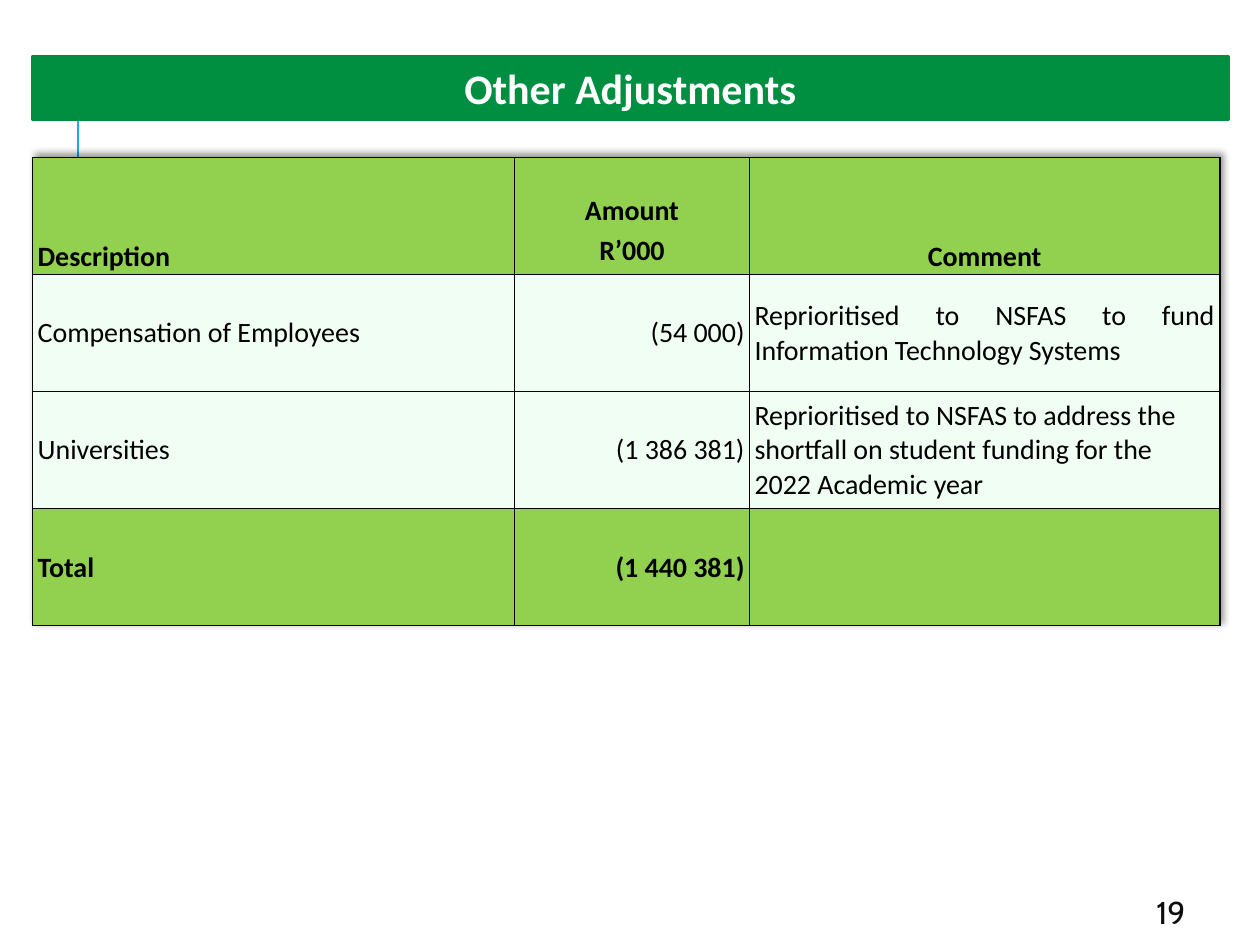
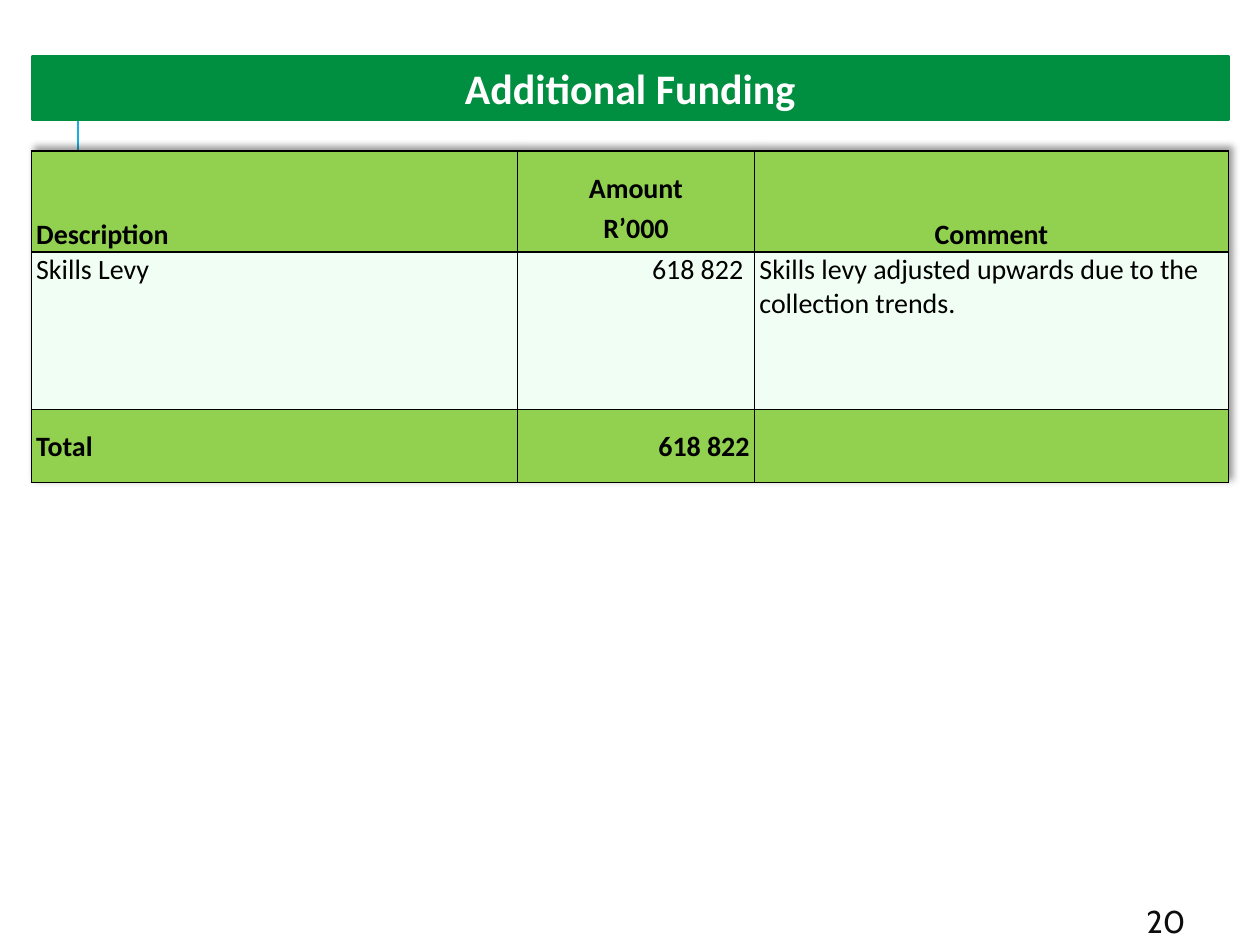
from lxml import etree
from pptx import Presentation
from pptx.dml.color import RGBColor
from pptx.enum.shapes import MSO_CONNECTOR
from pptx.enum.text import MSO_ANCHOR as ANCHOR, PP_ALIGN as ALIGN
from pptx.oxml import parse_xml
from pptx.oxml.ns import nsdecls, qn
from pptx.util import Cm, Pt

# Content
HEADER = ["Description", "Amount\nR’000", "Comment"]
SLIDES = [
    dict(
        title="Other Adjustments",
        rows=[
            HEADER,
            ["Compensation of Employees", "(54 000)",
             "Reprioritised to NSFAS to fund Information Technology Systems"],
            ["Universities", "(1 386 381)",
             "Reprioritised to NSFAS to address the shortfall on student "
             "funding for the 2022 Academic year"],
            ["Total", "(1 440 381)", ""],
        ],
        table_at=(0.66, 3.17), widths=[9.71, 4.74, 9.48], heights=[2.36] * 4,
        body_anchor=ANCHOR.MIDDLE, justified=[(1, 2)],
        number="19", number_box=(23.06, 17.93, 2.11, 0.89),
    ),
    dict(
        title="Additional Funding",
        rows=[
            HEADER,
            ["Skills Levy", "618 822 ",
             "Skills levy adjusted upwards due to the collection trends."],
            ["Total", "618 822", ""],
        ],
        table_at=(0.63, 3.04), widths=[9.8, 4.78, 9.55], heights=[2.04, 3.18, 1.47],
        body_anchor=ANCHOR.TOP, justified=[],
        number="20", number_box=(22.86, 17.93, 2.34, 1.27),
    ),
]

# Shared style
BAND = RGBColor(0x00, 0x8E, 0x40)
RULE = RGBColor(0x1C, 0xAD, 0xE4)
HEAD_FILL = RGBColor(0x92, 0xD0, 0x50)
BODY_FILL = RGBColor(0xF0, 0xFE, 0xF3)
WHITE = RGBColor(0xFF, 0xFF, 0xFF)
BLACK = RGBColor(0x00, 0x00, 0x00)
NUMBER_INK = RGBColor(0x0D, 0x0D, 0x0D)

TITLE_FONT = dict(name="Calibri", size=Pt(24), bold=True)
CELL_FONT = dict(name="Calibri", size=Pt(16))
NUMBER_FONT = dict(name="Cabin", size=Pt(18))

TITLE_BOX = (0.64, 1.14, 24.13, 1.27)
RULE_X, RULE_TOP, RULE_BOTTOM = 1.57, 2.29, 4.83
SIDE_MARGIN, HEAD_MARGIN, TOP_MARGIN = 0.1, 0.13, 0.02
HEAD_ALIGN = [ALIGN.LEFT, ALIGN.CENTER, ALIGN.CENTER]
BODY_ALIGN = [ALIGN.LEFT, ALIGN.RIGHT, ALIGN.LEFT]


def write(p, text, color, **font):
    r = p.add_run()
    r.text = text
    for name, value in font.items():
        setattr(r.font, name, value)
    r.font.color.rgb = color


def add_title(slide, text):
    sp = slide.shapes.title
    sp.left, sp.top, sp.width, sp.height = map(Cm, TITLE_BOX)
    sp.fill.solid()
    sp.fill.fore_color.rgb = sp.line.color.rgb = BAND
    sp.line.width = Pt(1.25)
    tf = sp.text_frame
    tf.vertical_anchor = ANCHOR.MIDDLE
    p = tf.paragraphs[0]
    p.alignment = ALIGN.CENTER
    write(p, text, WHITE, **TITLE_FONT)


def add_rule(slide):
    line = slide.shapes.add_connector(
        MSO_CONNECTOR.STRAIGHT, Cm(RULE_X), Cm(RULE_BOTTOM), Cm(RULE_X), Cm(RULE_TOP))
    line.line.color.rgb = RULE
    line.line.width = Pt(1.5)
    etree.SubElement(line._element.spPr, qn("a:effectLst"))
    slide.shapes._spTree.insert(2, line._element)  # behind the title band


def add_number(slide, text, box):
    tf = slide.shapes.add_textbox(*map(Cm, box)).text_frame
    tf.word_wrap = True
    tf.vertical_anchor = ANCHOR.MIDDLE
    write(tf.paragraphs[0], text, NUMBER_INK, **NUMBER_FONT)


def add_borders(cell):
    tcPr = cell._tc.get_or_add_tcPr()
    for side in ("lnL", "lnR", "lnT", "lnB"):
        tcPr.append(parse_xml(
            f'<a:{side} {nsdecls("a")} w="{Pt(1)}"><a:solidFill>'
            f'<a:srgbClr val="{BLACK}"/></a:solidFill></a:{side}>'))


def add_table_shadow(table):
    table._tbl.tblPr.insert(0, parse_xml(
        f'<a:effectLst {nsdecls("a")}><a:outerShdw blurRad="50800" dist="38100" '
        'dir="18900000" algn="bl" rotWithShape="0"><a:srgbClr val="000000">'
        '<a:alpha val="40000"/></a:srgbClr></a:outerShdw></a:effectLst>'))


def fill_cell(cell, text, fill, anchor, align, bold, stacked):
    add_borders(cell)
    cell.fill.solid()
    cell.fill.fore_color.rgb = fill
    cell.vertical_anchor = anchor
    cell.margin_left = cell.margin_right = Cm(SIDE_MARGIN)
    cell.margin_top = Cm(HEAD_MARGIN if stacked else TOP_MARGIN)
    cell.margin_bottom = Cm(HEAD_MARGIN if stacked else 0)
    if not text:
        return
    tf = cell.text_frame
    for i, part in enumerate(text.split("\n")):
        p = tf.add_paragraph() if i else tf.paragraphs[0]
        p.alignment = align
        if stacked:
            p.space_before = Pt(CELL_FONT["size"].pt * 0.2)
        write(p, part, BLACK, bold=bold, **CELL_FONT)


def add_table(slide, s):
    rows, widths, heights = s["rows"], s["widths"], s["heights"]
    table = slide.shapes.add_table(
        len(rows), len(widths), *map(Cm, s["table_at"]),
        Cm(sum(widths)), Cm(sum(heights))).table
    add_table_shadow(table)
    for col, width in zip(table.columns, widths):
        col.width = Cm(width)
    for row, height in zip(table.rows, heights):
        row.height = Cm(height)
    for i, texts in enumerate(rows):
        is_head, is_total = i == 0, i == len(rows) - 1
        strong = is_head or is_total
        anchor = (ANCHOR.BOTTOM if is_head
                  else ANCHOR.MIDDLE if is_total else s["body_anchor"])
        for j, text in enumerate(texts):
            align = (HEAD_ALIGN if is_head else BODY_ALIGN)[j]
            if (i, j) in s["justified"]:
                align = ALIGN.JUSTIFY
            fill_cell(table.cell(i, j), text, HEAD_FILL if strong else BODY_FILL,
                      anchor, align, strong, stacked="\n" in text)


def main():
    prs = Presentation()
    prs.slide_width, prs.slide_height = Cm(25.4), Cm(19.05)
    for s in SLIDES:
        slide = prs.slides.add_slide(prs.slide_layouts[5])
        add_title(slide, s["title"])
        add_rule(slide)
        add_number(slide, s["number"], s["number_box"])
        add_table(slide, s)
    prs.save("out.pptx")


if __name__ == "__main__":
    main()
